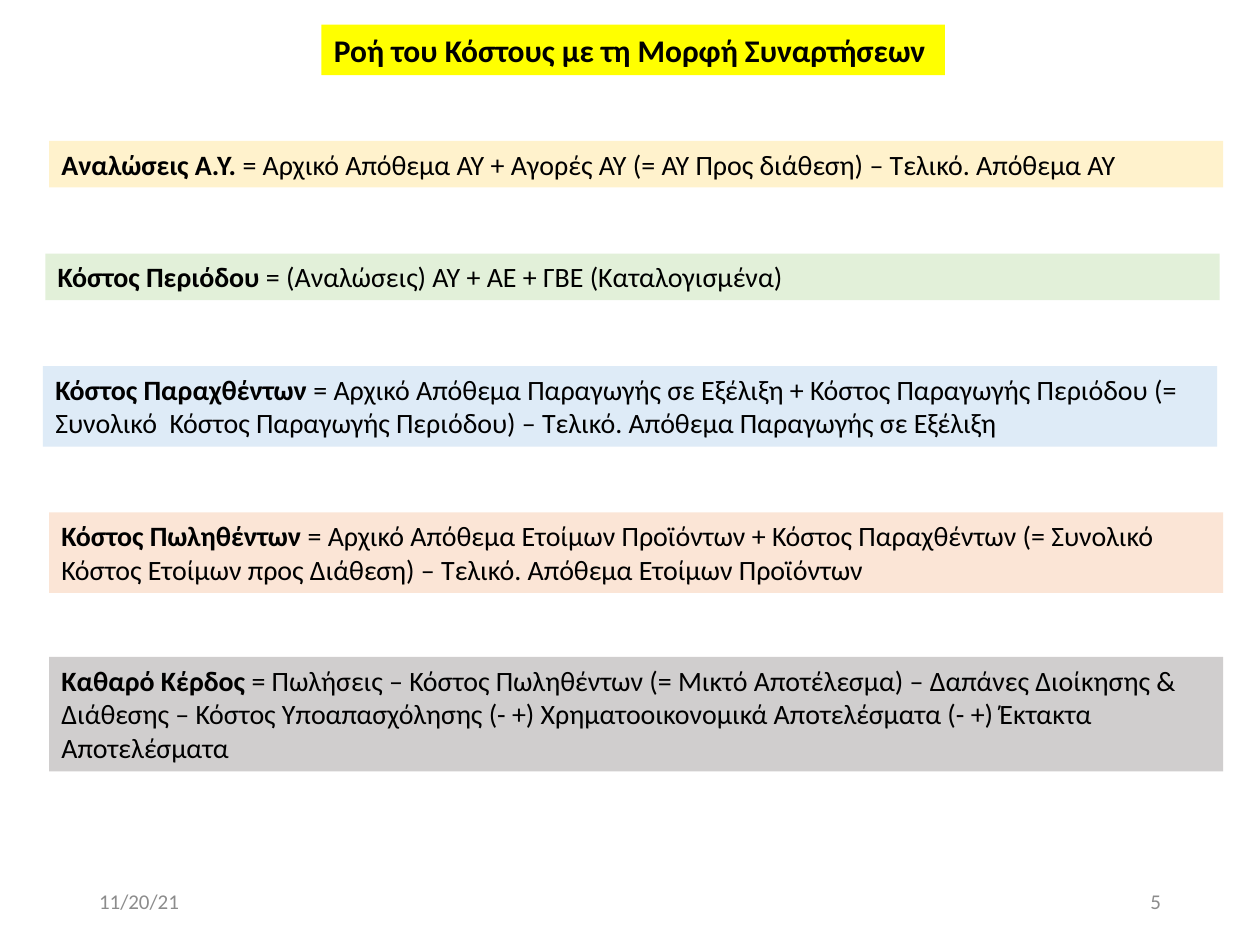
from pptx import Presentation
from pptx.dml.color import RGBColor
from pptx.enum.text import MSO_ANCHOR, MSO_AUTO_SIZE, PP_ALIGN
from pptx.util import Pt

TOP, MIDDLE = MSO_ANCHOR.TOP, MSO_ANCHOR.MIDDLE
LEFT, RIGHT = PP_ALIGN.LEFT, PP_ALIGN.RIGHT
GROW, FIXED = MSO_AUTO_SIZE.SHAPE_TO_FIT_TEXT, MSO_AUTO_SIZE.NONE

TITLE = "Ροή του Κόστους με τη Μορφή Συναρτήσεων"
BAR_WIDTH = 671
FORMULAS = [
    (28, 80.6, 26.6, "FFF2CC", "Αναλώσεις Α.Υ. ",
     "= Αρχικό Απόθεμα ΑΥ + Αγορές ΑΥ (= ΑΥ Προς διάθεση) – Τελικό. Απόθεμα ΑΥ"),
    (25.9, 144.9, 26.6, "E2F0D9", "Κόστος Περιόδου ",
     "= (Αναλώσεις) ΑΥ + ΑΕ + ΓΒΕ (Καταλογισμένα)"),
    (24.5, 209.2, 46, "DEEBF7", "Κόστος Παραχθέντων ",
     "= Αρχικό Απόθεμα Παραγωγής σε Εξέλιξη + Κόστος Παραγωγής Περιόδου "
     "(= Συνολικό  Κόστος Παραγωγής Περιόδου) – Τελικό. Απόθεμα Παραγωγής σε Εξέλιξη"),
    (28, 292.8, 46, "FBE5D6", "Κόστος Πωληθέντων ",
     "= Αρχικό Απόθεμα Ετοίμων Προϊόντων + Κόστος Παραχθέντων "
     "(= Συνολικό  Κόστος Ετοίμων προς Διάθεση) – Τελικό. Απόθεμα Ετοίμων Προϊόντων"),
    (28, 375.4, 65.4, "D0CECE", "Καθαρό Κέρδος ",
     "= Πωλήσεις – Κόστος Πωληθέντων (= Μικτό Αποτέλεσμα) – Δαπάνες Διοίκησης & "
     "Διάθεσης – Κόστος Υποαπασχόλησης (- +) Χρηματοοικονομικά Αποτελέσματα (- +) "
     "Έκτακτα Αποτελέσματα"),
]


def color(value):
    """Turn a hex string into a colour."""
    return RGBColor.from_string(value)


def fill_box(box, value):
    """Give a box a solid fill."""
    box.fill.solid()
    box.fill.fore_color.rgb = color(value)


def format_text(box, size, value="000000", anchor=TOP, align=LEFT, fit=GROW):
    """Set the frame and paragraph format of a box and return its paragraph."""
    frame = box.text_frame
    frame.word_wrap = True
    frame.auto_size = fit
    frame.vertical_anchor = anchor
    para = frame.paragraphs[0]
    para.alignment = align
    para.font.name = "Calibri"
    para.font.size = Pt(size)
    para.font.color.rgb = color(value)
    return para


def set_title(page):
    """Place the highlighted title."""
    title = page.shapes.title
    title.left, title.top, title.width, title.height = Pt(183.6), Pt(14), Pt(356.4), Pt(29)
    title.text_frame.text = TITLE
    fill_box(title, "FFFF00")
    format_text(title, 18, fit=FIXED).font.bold = True


def add_box(page, left, top, width, height):
    """Add an empty text box."""
    return page.shapes.add_textbox(Pt(left), Pt(top), Pt(width), Pt(height))


def add_formula(page, left, top, height, fill, term, definition):
    """Add a coloured bar with a bold term and its definition."""
    box = add_box(page, left, top, BAR_WIDTH, height)
    fill_box(box, fill)
    para = format_text(box, 16)
    span = para.add_run()
    span.text = term
    span.font.bold = True
    para.add_run().text = definition


def add_footer(page, left, text, align):
    """Add a grey footer text."""
    box = add_box(page, left, 500.5, 162, 28.8)
    para = format_text(box, 12, "8C8C8C", MIDDLE, align, FIXED)
    para.add_run().text = text


def main():
    """Build and save the deck."""
    deck = Presentation()
    deck.slide_width, deck.slide_height = Pt(720), Pt(540)
    page = deck.slides.add_slide(deck.slide_layouts[5])
    set_title(page)
    for formula in FORMULAS:
        add_formula(page, *formula)
    add_footer(page, 49.5, "11/20/21", LEFT)
    add_footer(page, 508.5, "5", RIGHT)
    deck.save("out.pptx")


if __name__ == "__main__":
    main()
